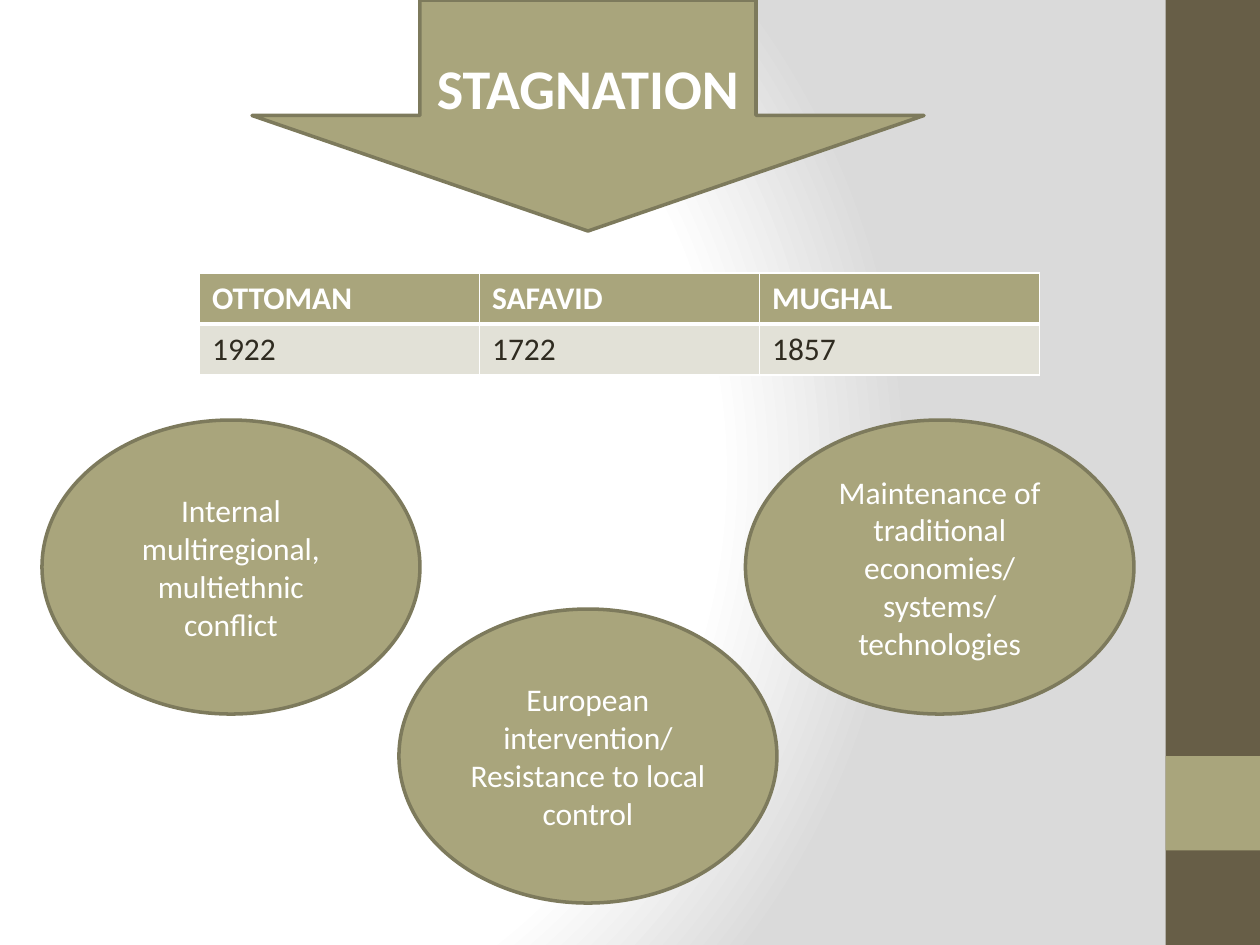
import lxml.etree
import pptx
import pptx.dml.color
import pptx.enum.shapes
import pptx.enum.text
import pptx.oxml
import pptx.oxml.ns
import pptx.util

COLORS = {
    "white": "FFFFFF", "shade": "DADADA", "brown": "675E47", "olive": "A9A57C",
    "outline": "7D7A5C", "pale": "E2E1D7", "ink": "2F2B20",
}
CELL = pptx.util.Inches(1) / 12  # the page is a grid of 120 columns by 90 rows
COLUMNS, ROWS = 120, 90
SHAPES = pptx.enum.shapes.MSO_SHAPE
BODY = {"name": "Calibri", "size": pptx.util.Pt(18), "bold": False}
HEADING = {**BODY, "bold": True}
TITLE = {**HEADING, "size": pptx.util.Pt(32)}


def grid(*cells):
    return [pptx.util.Emu(round(cell * CELL)) for cell in cells]


def rgb(name):
    return pptx.dml.color.RGBColor.from_string(COLORS[name])


def write(frame, lines, style, color, align=None):
    for index, line in enumerate(lines):
        para = frame.add_paragraph() if index else frame.paragraphs[0]
        para.alignment = align
        span = para.add_run()
        span.text = line
        for key, value in style.items():
            setattr(span.font, key, value)
        span.font.color.rgb = rgb(color)


def add_block(page, kind, box, fill, outline=None):
    block = page.shapes.add_shape(kind, *grid(*box))
    block.shadow.inherit = False
    block.fill.solid()
    block.fill.fore_color.rgb = rgb(fill)
    if outline:
        block.line.color.rgb = rgb(outline)
        block.line.width = pptx.util.Pt(2)
    else:
        block.line.fill.background()
    return block


def add_label(page, kind, box, lines, style):
    block = add_block(page, kind, box, "olive", "outline")
    block.text_frame.word_wrap = True
    block.text_frame.vertical_anchor = pptx.enum.text.MSO_ANCHOR.MIDDLE
    write(block.text_frame, lines, style, "white", pptx.enum.text.PP_ALIGN.CENTER)


def paint_background(page):
    fill = page.background.fill
    fill.gradient()
    gradient = page.element.find(".//" + pptx.oxml.ns.qn("a:gradFill"))
    stops = "".join(
        f'<a:gs pos="{share * 1000}"><a:srgbClr val="{COLORS[name]}"/></a:gs>'
        for share, name in ((0, "white"), (75, "white"), (100, "shade")))
    gradient.getparent().replace(gradient, pptx.oxml.parse_xml(
        f'<a:gradFill {pptx.oxml.ns.nsdecls("a")} rotWithShape="1">'
        f'<a:gsLst>{stops}</a:gsLst><a:path path="circle">'
        '<a:fillToRect l="20000" t="50000" r="100000" b="50000"/>'
        '</a:path></a:gradFill>'))


def add_sidebar(page, box):
    left, top, width, height = box
    add_block(page, SHAPES.RECTANGLE, box, "brown")
    accent = (left, top + height * 0.8, width, height * 0.1)
    add_block(page, SHAPES.RECTANGLE, accent, "olive")


def set_borders(cell, widths):
    properties = cell._tc.get_or_add_tcPr()
    for index, (side, width) in enumerate(widths.items()):
        properties.insert(index, pptx.oxml.parse_xml(
            f'<a:ln{side} {pptx.oxml.ns.nsdecls("a")} w="{pptx.util.Pt(width)}">'
            f'<a:solidFill><a:srgbClr val="{COLORS["white"]}"/></a:solidFill>'
            f'</a:ln{side}>'))


def add_dates(page, box, dates):
    table = page.shapes.add_table(2, len(dates), *grid(*box)).table
    table.horz_banding = False
    rows = (
        (dates.keys(), HEADING, "white", "olive", {"L": 1, "R": 1, "T": 1, "B": 3}),
        (dates.values(), BODY, "ink", "pale", {"L": 1, "R": 1, "T": 3, "B": 1}),
    )
    for row, (texts, style, color, fill, widths) in enumerate(rows):
        for column, text in enumerate(texts):
            cell = table.cell(row, column)
            cell.fill.solid()
            cell.fill.fore_color.rgb = rgb(fill)
            set_borders(cell, widths)
            write(cell.text_frame, [text], style, color)


def add_causes(page, box):
    left, top, width, height = box
    oval_height = 28
    causes = (  # offset from the left, width, offset from the top, lines
        (0, 36, 0, ["Internal multiregional, multiethnic conflict"]),
        (width - 37, 37, 0,
         ["Maintenance of traditional economies/", "systems/", "technologies"]),
        (34, 36, height - oval_height,
         ["European intervention/", "Resistance to local control"]),
    )
    for across, oval_width, down, lines in causes:
        oval = (left + across, top + down, oval_width, oval_height)
        add_label(page, SHAPES.OVAL, oval, lines, BODY)


def main():
    deck = pptx.Presentation()
    deck.slide_width, deck.slide_height = grid(COLUMNS, ROWS)
    page = deck.slides.add_slide(deck.slide_layouts[6])

    # Backdrop
    paint_background(page)
    add_sidebar(page, (111, 0, 9, ROWS))

    # Heading arrow, end dates of the empires, and causes
    add_label(page, SHAPES.DOWN_ARROW, (24, 0, 64, 22), ["STAGNATION"], TITLE)
    add_dates(page, (19, 26, 80, 9.73),
              {"OTTOMAN": "1922", "SAFAVID": "1722", "MUGHAL": "1857"})
    add_causes(page, (4, 40, 104, 46))

    deck.save("out.pptx")


if __name__ == "__main__":
    main()
